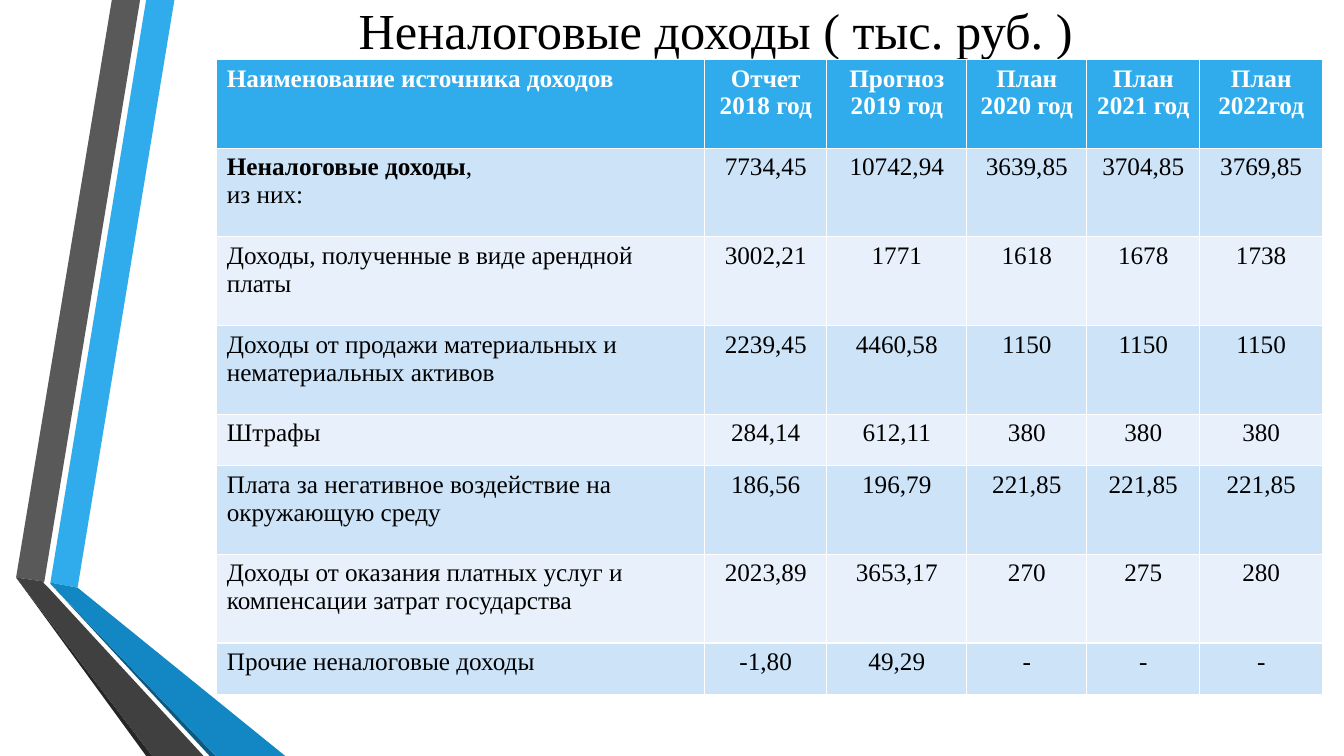
"""Slide with a table of non-tax revenues beside a folded ribbon."""
import dataclasses

import pptx
import pptx.dml.color
import pptx.enum.text
import pptx.presentation
import pptx.slide
import pptx.text.text
import pptx.util

RGBColor = pptx.dml.color.RGBColor
Align = pptx.enum.text.PP_ALIGN

BLACK = RGBColor(0x00, 0x00, 0x00)
WHITE = RGBColor(0xFF, 0xFF, 0xFF)
SKY = RGBColor(0x30, 0xAC, 0xEC)
OCEAN = RGBColor(0x12, 0x87, 0xC3)
NAVY = RGBColor(0x0C, 0x5A, 0x82)
GRAY = RGBColor(0x59, 0x59, 0x59)
CHARCOAL = RGBColor(0x40, 0x40, 0x40)
SOOT = RGBColor(0x26, 0x26, 0x26)
BAND_DARK = RGBColor(0xCD, 0xE3, 0xF8)
BAND_LIGHT = RGBColor(0xE8, 0xF1, 0xFB)

FONT = "Times New Roman"
SLIDE_WIDTH, SLIDE_HEIGHT = pptx.util.Inches(13.33), pptx.util.Inches(7.5)
GRID_COLUMNS, GRID_ROWS = 1333, 750
TALL, SHORT = 88, 51
SOURCE_COLUMNS = (484, 121, 139, 119, 112, 122)


@dataclasses.dataclass(frozen=True)
class Fold:
    """One flat face of the ribbon, outlined in grid columns and rows."""
    color: RGBColor
    outline: tuple[tuple[int, int], ...]


@dataclasses.dataclass(frozen=True)
class Revenue:
    """One table row: a source of revenue and its yearly figures."""
    source: str
    figures: tuple[str, ...]
    height: int = TALL
    lead: str = ""


RIBBON = (
    Fold(SKY, ((50, 578), (77, 583), (173, 0), (145, 0))),
    Fold(GRAY, ((139, 0), (111, 0), (16, 573), (44, 577))),
    Fold(SOOT, ((16, 573), (145, 750), (151, 750))),
    Fold(NAVY, ((50, 579), (208, 750), (214, 750))),
    Fold(OCEAN, ((50, 579), (214, 750), (283, 750), (77, 583), (50, 578))),
    Fold(CHARCOAL, ((202, 750), (48, 583), (43, 578), (44, 577), (16, 573), (151, 750))),
)

HEADER = Revenue("Наименование источника доходов", (
    "Отчет 2018 год", "Прогноз 2019 год", "План 2020 год", "План 2021 год", "План 2022год"))

REVENUES = (
    Revenue(",\nиз них:", ("7734,45", "10742,94", "3639,85", "3704,85", "3769,85"),
            lead="Неналоговые доходы"),
    Revenue("Доходы, полученные в виде арендной платы",
            ("3002,21", "1771", "1618", "1678", "1738")),
    Revenue("Доходы от продажи материальных и нематериальных активов",
            ("2239,45", "4460,58", "1150", "1150", "1150")),
    Revenue("Штрафы", ("284,14", "612,11", "380", "380", "380"), SHORT),
    Revenue("Плата за негативное воздействие на окружающую среду",
            ("186,56", "196,79", "221,85", "221,85", "221,85")),
    Revenue("Доходы от оказания платных услуг и компенсации затрат государства",
            ("2023,89", "3653,17", "270", "275", "280")),
    Revenue("Прочие неналоговые доходы", ("-1,80", "49,29", "-", "-", "-"), SHORT),
)


def across(columns: float) -> int:
    """Return the width of a number of grid columns."""
    return round(SLIDE_WIDTH * columns / GRID_COLUMNS)


def down(rows: float) -> int:
    """Return the height of a number of grid rows."""
    return round(SLIDE_HEIGHT * rows / GRID_ROWS)


def write(frame: pptx.text.text.TextFrame, text: str, *, size: float = 18,
          color: RGBColor = BLACK, bold: bool = False,
          align: Align = Align.LEFT, lead: str = "") -> None:
    """Write lines as paragraphs, with an optional bold lead before the first."""
    for index, line in enumerate(text.split("\n")):
        paragraph = frame.paragraphs[0] if index == 0 else frame.add_paragraph()
        paragraph.alignment = align
        pieces = [(line, bold)]
        if lead and index == 0:
            pieces.insert(0, (lead, True))
        for piece, weight in pieces:
            run = paragraph.add_run()
            run.text = piece
            run.font.name = FONT
            run.font.size = pptx.util.Pt(size)
            run.font.bold = weight
            run.font.color.rgb = color


def draw_fold(slide: pptx.slide.Slide, fold: Fold) -> None:
    """Draw one face of the ribbon."""
    start, *others = [(across(x), down(y)) for x, y in fold.outline]
    builder = slide.shapes.build_freeform(*start)
    builder.add_line_segments(others, close=True)
    face = builder.convert_to_shape()
    face.shadow.inherit = False
    face.fill.solid()
    face.fill.fore_color.rgb = fold.color
    face.line.fill.background()


def place_title(slide: pptx.slide.Slide, text: str) -> None:
    """Set the slide title above the table."""
    title = slide.shapes.title
    title.left, title.top = across(162), down(0)
    title.width, title.height = across(1096), down(59)
    frame = title.text_frame
    frame.auto_size = pptx.enum.text.MSO_AUTO_SIZE.NONE
    frame.vertical_anchor = pptx.enum.text.MSO_ANCHOR.MIDDLE
    write(frame, text, size=36, align=Align.CENTER)


def draw_revenues(slide: pptx.slide.Slide) -> None:
    """Draw the table with its header and banded rows."""
    entries = (HEADER, *REVENUES)
    table = slide.shapes.add_table(
        len(entries), len(SOURCE_COLUMNS), across(215), down(59),
        across(sum(SOURCE_COLUMNS)), down(sum(entry.height for entry in entries))).table
    for column, width in zip(table.columns, SOURCE_COLUMNS):
        column.width = across(width)
    for row_index, entry in enumerate(entries):
        table.rows[row_index].height = down(entry.height)
        is_header = row_index == 0
        band = SKY if is_header else BAND_DARK if row_index % 2 else BAND_LIGHT
        for column_index, text in enumerate((entry.source, *entry.figures)):
            cell = table.cell(row_index, column_index)
            cell.fill.solid()
            cell.fill.fore_color.rgb = band
            write(cell.text_frame, text, bold=is_header,
                  color=WHITE if is_header else BLACK,
                  align=Align.CENTER if column_index else Align.LEFT,
                  lead="" if column_index else entry.lead)


def main() -> None:
    """Build and save the presentation."""
    presentation = pptx.Presentation()
    presentation.slide_width, presentation.slide_height = SLIDE_WIDTH, SLIDE_HEIGHT
    slide = presentation.slides.add_slide(presentation.slide_layouts[5])
    for fold in RIBBON:
        draw_fold(slide, fold)
    place_title(slide, "Неналоговые доходы ( тыс. руб. )")
    draw_revenues(slide)
    presentation.save("out.pptx")


if __name__ == "__main__":
    main()
